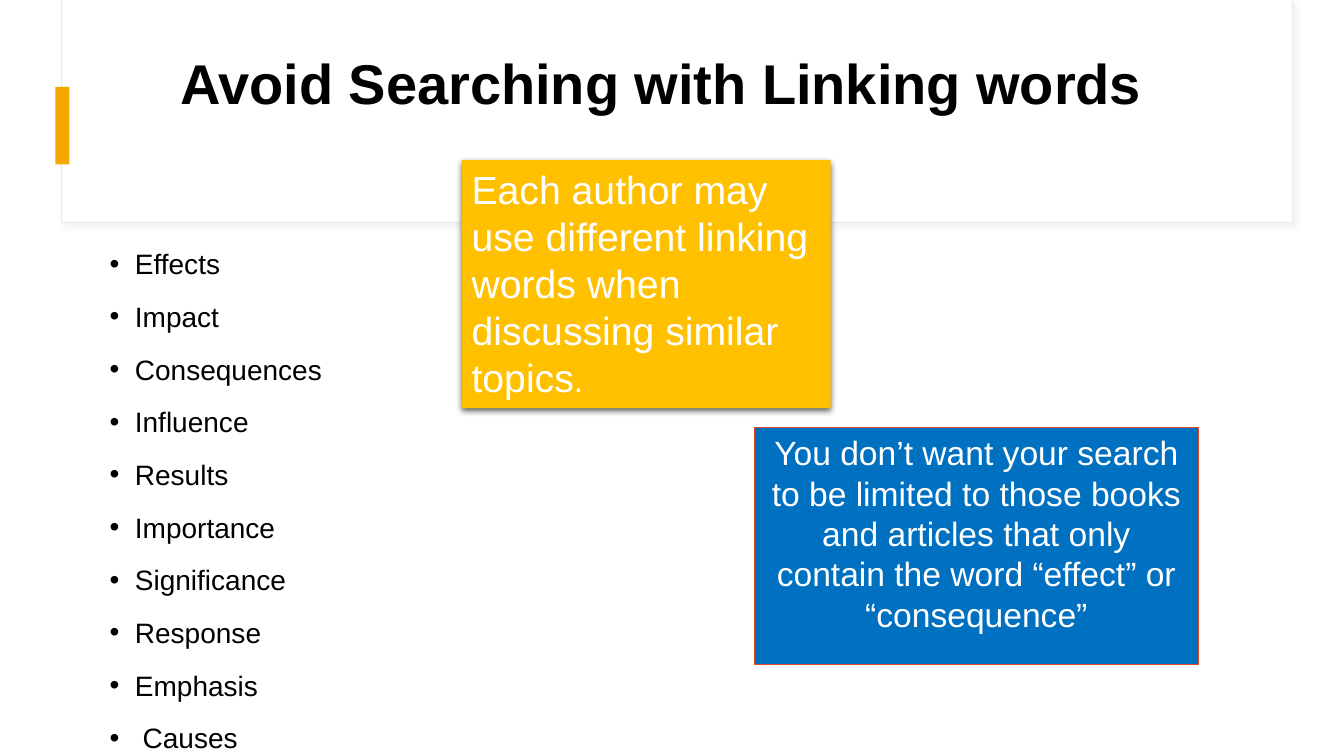
import pptx
import pptx.dml.color
import pptx.enum.shapes
import pptx.enum.text
import pptx.oxml
import pptx.oxml.ns
import pptx.util

Pt = pptx.util.Pt
ALIGN = pptx.enum.text.PP_ALIGN
ANCHOR = pptx.enum.text.MSO_ANCHOR
FONT = "Arial"
COLORS = {
    "white": "FFFFFF",
    "black": "000000",
    "frame": "E9E9E9",
    "frame_shadow": "D9D9D9",
    "accent": "F5A700",
    "amber": "FFC000",
    "blue": "0070C0",
    "blue_edge": "E64823",
}
LINKING_WORDS = [
    "Effects", "Impact", "Consequences", "Influence", "Results",
    "Importance", "Significance", "Response", "Emphasis", " Causes",
]


def color(name):
    return pptx.dml.color.RGBColor.from_string(COLORS[name])


def add_shadow(shape, name, opacity, blur, distance, angle):
    """Give a shape an outer shadow; opacity in percent, angle in degrees."""
    effects = pptx.oxml.parse_xml(
        f'<a:effectLst {pptx.oxml.ns.nsdecls("a")}>'
        f'<a:outerShdw blurRad="{Pt(blur)}" dist="{Pt(distance)}" '
        f'dir="{angle * 60000}" algn="ctr" rotWithShape="0">'
        f'<a:srgbClr val="{COLORS[name]}"><a:alpha val="{opacity * 1000}"/></a:srgbClr>'
        '</a:outerShdw></a:effectLst>'
    )
    properties = shape.fill._xPr
    properties.replace(properties.find(pptx.oxml.ns.qn("a:effectLst")), effects)


def add_panel(page, left, top, width, height, fill, line=None, line_width=0.75):
    panel = page.shapes.add_shape(
        pptx.enum.shapes.MSO_SHAPE.RECTANGLE, Pt(left), Pt(top), Pt(width), Pt(height))
    panel.fill.solid()
    panel.fill.fore_color.rgb = color(fill)
    if line:
        panel.line.color.rgb = color(line)
        panel.line.width = Pt(line_width)
    else:
        panel.line.fill.background()
    panel.shadow.inherit = False
    return panel


def add_text_box(page, left, top, width, height):
    return page.shapes.add_textbox(Pt(left), Pt(top), Pt(width), Pt(height))


def add_bullet(para, indent=18):
    properties = para._p.get_or_add_pPr()
    properties.set("marL", str(Pt(indent)))
    properties.set("indent", str(-Pt(indent)))
    namespace = pptx.oxml.ns.nsdecls("a")
    properties.append(pptx.oxml.parse_xml(f'<a:buFont {namespace} typeface="{FONT}"/>'))
    properties.append(pptx.oxml.parse_xml(f'<a:buChar {namespace} char="•"/>'))


def write(shape, paragraphs, size=20, ink="black", bold=False, align=ALIGN.LEFT,
          anchor=ANCHOR.TOP, spacing=1.0, before=0, bullet=False):
    """Fill a shape with paragraphs, each a list of (text, size or None) spans."""
    frame = shape.text_frame
    frame.word_wrap = True
    frame.vertical_anchor = anchor
    for index, spans in enumerate(paragraphs):
        para = frame.add_paragraph() if index else frame.paragraphs[0]
        para.alignment = align
        para.line_spacing = spacing
        para.space_before = Pt(before)
        if bullet:
            add_bullet(para)
        for text, span_size in spans:
            span = para.add_run()
            span.text = text
            span.font.name = FONT
            span.font.size = Pt(span_size or size)
            span.font.bold = bold
            span.font.color.rgb = color(ink)


def add_header(page):
    frame = add_panel(page, 44, 0, 879, 159, "white", line="frame")
    add_shadow(frame, "frame_shadow", 30, 4, 3, 45)
    add_panel(page, 44.6, 0, 878.4, 158.4, "white")
    add_panel(page, 39.6, 62, 10, 55.4, "accent")
    title = add_text_box(page, 71.3, 23, 801.4, 77.8)
    write(title, [[("Avoid Searching with Linking words", None)]], size=40, bold=True,
          align=ALIGN.CENTER, anchor=ANCHOR.MIDDLE, spacing=0.9)


def add_notes_on_wording(page):
    authors = add_panel(page, 329.8, 114.5, 263.5, 177.1, "amber")
    add_shadow(authors, "black", 63, 4.5, 1.5, 90)
    write(authors, [[
        ("Each author may use different linking words when discussing similar topics", None),
        (".", 24),
    ]], size=28, ink="white")

    limits = add_panel(page, 538.6, 305.3, 317.5, 169.2, "blue",
                       line="blue_edge", line_width=0.5)
    write(limits, [[(
        "You don’t want your search to be limited to those books and articles "
        "that only contain the word “effect” or “consequence”", None)]],
        size=24, ink="white", align=ALIGN.CENTER)


def main():
    deck = pptx.Presentation()
    deck.slide_width, deck.slide_height = Pt(960), Pt(540)
    page = deck.slides.add_slide(deck.slide_layouts[6])
    add_header(page)
    word_list = add_text_box(page, 71.3, 169.2, 511.2, 386.6)
    write(word_list, [[(word, None)] for word in LINKING_WORDS],
          spacing=1.15, before=10, bullet=True)
    add_notes_on_wording(page)
    deck.save("out.pptx")


if __name__ == "__main__":
    main()
